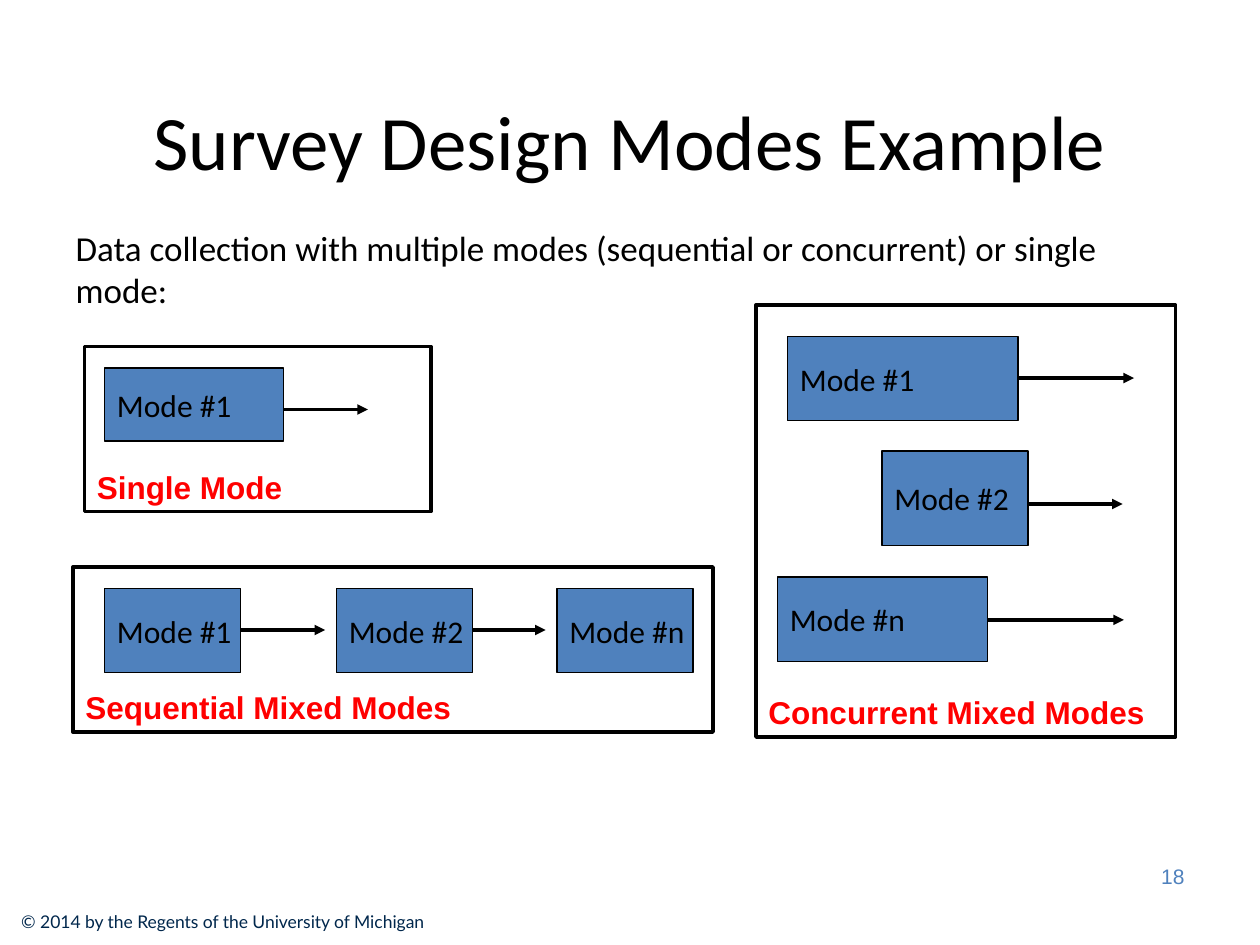
from dataclasses import dataclass

from lxml import etree
from pptx import Presentation
from pptx.dml.color import RGBColor
from pptx.enum.shapes import MSO_CONNECTOR, MSO_SHAPE
from pptx.enum.text import MSO_ANCHOR, PP_ALIGN
from pptx.oxml.ns import qn
from pptx.util import Inches, Pt

RECT = MSO_SHAPE.RECTANGLE
LINE = MSO_CONNECTOR.STRAIGHT
TOP, MID, LOW = MSO_ANCHOR.TOP, MSO_ANCHOR.MIDDLE, MSO_ANCHOR.BOTTOM
LEFT, MIDST, RIGHT = PP_ALIGN.LEFT, PP_ALIGN.CENTER, PP_ALIGN.RIGHT


@dataclass(frozen=True)
class Theme:
    ink: str = "000000"
    blue: str = "4F81BD"
    red: str = "FF0000"
    navy: str = "00274C"
    main: str = "Calibri"
    sans: str = "Arial"
    foot: str = "Lato"
    head: int = 44
    body: int = 20
    label: int = 18
    page: int = 12
    small: int = 10
    thin: float = 0.75
    thick: float = 2


THEME = Theme()


def place(shape, box):
    shape.left, shape.top, shape.width, shape.height = map(Inches, box)


def write(shape, text, size, font, color, align=LEFT, anchor=TOP, bold=False, wrap=True):
    frame = shape.text_frame
    frame.word_wrap = wrap
    frame.vertical_anchor = anchor
    para = frame.paragraphs[0]
    para.alignment = align
    para.space_before = Pt(0)
    run = para.add_run()
    run.text = text
    run.font.size = Pt(size)
    run.font.name = font
    run.font.bold = bold
    run.font.color.rgb = RGBColor.from_string(color)
    return para


def add_rect(slide, box, width, fill=None):
    rect = slide.shapes.add_shape(RECT, *map(Inches, box))
    rect.shadow.inherit = False
    if fill:
        rect.fill.solid()
        rect.fill.fore_color.rgb = RGBColor.from_string(fill)
    else:
        rect.fill.background()
    rect.line.width = Pt(width)
    rect.line.color.rgb = RGBColor.from_string(THEME.ink)
    return rect


def add_arrow(slide, x, y, length):
    arrow = slide.shapes.add_connector(
        LINE, Inches(x), Inches(y), Inches(x + length), Inches(y))
    arrow.line.width = Pt(THEME.thick)
    arrow.line.color.rgb = RGBColor.from_string(THEME.ink)
    etree.SubElement(arrow.line._get_or_add_ln(), qn("a:tailEnd"), type="triangle")
    etree.SubElement(arrow._element.spPr, qn("a:effectLst"))


def add_panel(slide, box, name, modes):
    """Framed group; modes hold text, offset, size, arrow drop and arrow length."""
    left, top = box[:2]
    frame = add_rect(slide, box, THEME.thick)
    write(frame, name, THEME.label, THEME.sans, THEME.red, anchor=LOW, bold=True)
    for text, dx, dy, wide, high, drop, length in modes:
        x, y = left + dx, top + dy
        rect = add_rect(slide, (x, y, wide, high), THEME.thin, THEME.blue)
        write(rect, text, THEME.label, THEME.main, THEME.ink, anchor=MID, wrap=False)
        if length:
            add_arrow(slide, x + wide, y + drop, length)


def add_head(slide, box):
    left, top, wide, high = box
    title, body = slide.placeholders
    place(title, (left, top, wide, 0.88))
    write(title, "Survey Design Modes Example", THEME.head, THEME.main,
          THEME.ink, MIDST, MID)
    place(body, (left, top + 1.08, wide, high - 1.08))
    para = write(body, "Data collection with multiple modes (sequential or "
                 "concurrent) or single mode:", THEME.body, THEME.main, THEME.ink)
    props = para._p.get_or_add_pPr()
    props.set("marL", "0")
    props.set("indent", "0")
    etree.SubElement(props, qn("a:buNone"))


def add_foot(slide, box):
    left, top, wide, high = box
    note = slide.shapes.add_textbox(*map(Inches, (left, top + high - 0.27, 3.51, 0.27)))
    write(note, "© 2014 by the Regents of the University of Michigan",
          THEME.small, THEME.foot, THEME.navy, wrap=False)
    page = slide.shapes.add_textbox(*map(Inches, (left + wide - 2.33, top, 2.33, 0.4)))
    write(page, "18", THEME.page, THEME.sans, THEME.blue, RIGHT, MID)


def main():
    deck = Presentation()
    deck.slide_width, deck.slide_height = Inches(10), Inches(7.5)
    slide = deck.slides.add_slide(deck.slide_layouts[1])

    # Title, lead text and footer
    add_head(slide, (0.5, 0.67, 9, 6.03))
    add_foot(slide, (0.07, 6.75, 9.43, 0.7))

    # Three ways to combine modes
    add_panel(slide, (0.67, 2.75, 2.75, 1.31), "Single Mode", [
        ("Mode #1", 0.16, 0.17, 1.42, 0.58, 0.33, 0.67),
    ])
    add_panel(slide, (0.58, 4.5, 5.08, 1.31), "Sequential Mixed Modes", [
        (text, dx, 0.17, 1.08, 0.67, 0.33, length)
        for text, dx, length in (
            ("Mode #1", 0.25, 0.67), ("Mode #2", 2.09, 0.58), ("Mode #n", 3.84, 0))
    ])
    add_panel(slide, (6, 2.42, 3.33, 3.43), "Concurrent Mixed Modes", [
        ("Mode #1", 0.25, 0.25, 1.83, 0.67, 0.33, 0.92),
        ("Mode #2", 1, 1.16, 1.16, 0.75, 0.42, 0.75),
        ("Mode #n", 0.17, 2.16, 1.67, 0.67, 0.34, 1.08),
    ])
    deck.save("out.pptx")


if __name__ == "__main__":
    main()
